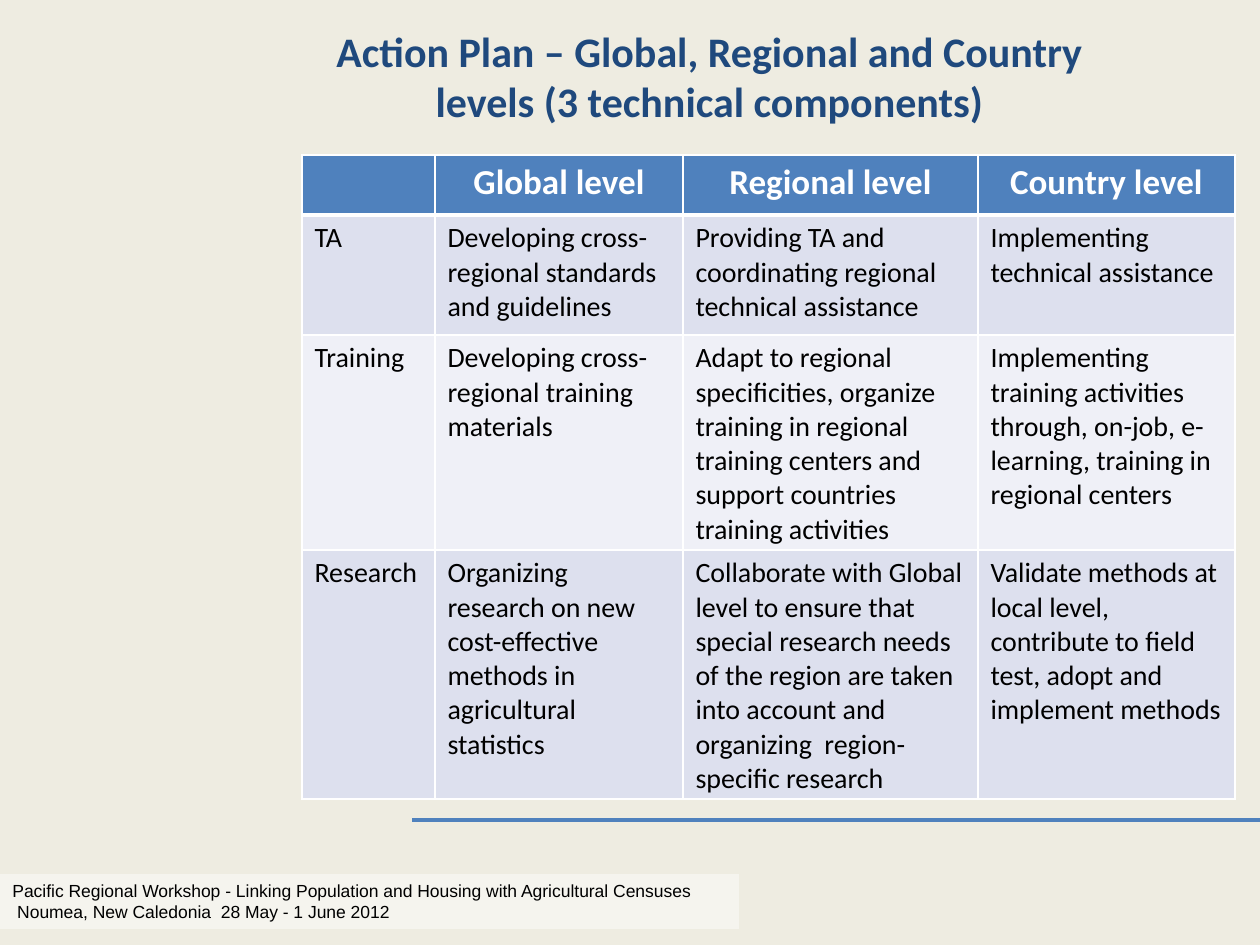
from lxml import etree
from pptx import Presentation
from pptx import util as u
from pptx.dml.color import RGBColor
from pptx.enum import shapes, text
from pptx.oxml import ns

SCALE = 914400 / 126  # EMU in one px
BLUE, NAVY, WHITE, BLACK = "4F81BD", "1F497D", "FFFFFF", "000000"


def px(*lengths):
    return [round(length * SCALE) for length in lengths]


def write(frame, content, font="Calibri", size=16, color=BLACK, bold=False,
          align=text.PP_ALIGN.LEFT):
    frame.word_wrap = True
    frame.text = content
    for para in frame.paragraphs:
        para.alignment = align
        para.font.name = font
        para.font.size = u.Pt(size)
        para.font.bold = bold
        para.font.color.rgb = RGBColor.from_string(color)


deck = Presentation()
deck.slide_width, deck.slide_height = px(1260, 945)
page = deck.slides.add_slide(deck.slide_layouts[6])
page.background.fill.solid()
page.background.fill.fore_color.rgb = RGBColor.from_string("EEECE1")

# Footer on a translucent band
footer = page.shapes.add_shape(shapes.MSO_SHAPE.RECTANGLE, *px(0, 874, 739, 55))
footer.shadow.inherit = False
footer.line.fill.background()
footer.fill.solid()
footer.fill.fore_color.rgb = RGBColor.from_string(WHITE)
tint = footer.fill._xPr.find(".//" + ns.qn("a:srgbClr"))
etree.SubElement(tint, ns.qn("a:alpha"), val="46000")
footer.text_frame.vertical_anchor = text.MSO_ANCHOR.TOP
write(footer.text_frame,
      "Pacific Regional Workshop - Linking Population and Housing with Agricultural Censuses\n"
      " Noumea, New Caledonia  28 May - 1 June 2012", font="Arial", size=10)

# Rule above the footer
rule = page.shapes.add_connector(shapes.MSO_CONNECTOR.STRAIGHT, *px(1260, 820, 412, 820))
rule.line.color.rgb = RGBColor.from_string(BLUE)
rule.line.width = u.Pt(2.5)
etree.SubElement(rule._element.spPr, ns.qn("a:effectLst"))

# Title
title = page.shapes.add_textbox(*px(273, 0, 873, 152))
title.text_frame.vertical_anchor = text.MSO_ANCHOR.MIDDLE
write(title.text_frame,
      "Action Plan – Global, Regional and Country levels (3 technical components)",
      size=24, color=NAVY, bold=True, align=text.PP_ALIGN.CENTER)

# Action plan table
rows = [
    ["", "Global level", "Regional level", "Country level"],
    ["TA",
     "Developing cross-regional standards and guidelines",
     "Providing TA and coordinating regional technical assistance",
     "Implementing technical assistance"],
    ["Training",
     "Developing cross-regional training materials",
     "Adapt to regional specificities, organize training in regional training centers "
     "and support countries training activities",
     "Implementing training activities through, on-job, e-learning, training in regional centers"],
    ["Research",
     "Organizing research on new cost-effective methods in agricultural statistics",
     "Collaborate with Global level to ensure that special research needs of the region "
     "are taken into account and organizing  region-specific research",
     "Validate methods at local level, contribute to field test, adopt and implement methods"],
]
widths = px(133, 248, 295, 257)
heights = px(60, 120, 215, 249)
fills = [BLUE, "DDE0EE", "EFF0F7", "DDE0EE"]

table = page.shapes.add_table(len(rows), len(widths), *px(302, 155),
                              sum(widths), sum(heights)).table
for column, width in zip(table.columns, widths):
    column.width = width

for r, row in enumerate(rows):
    table.rows[r].height = heights[r]
    for c, content in enumerate(row):
        cell = table.cell(r, c)
        cell.fill.solid()
        cell.fill.fore_color.rgb = RGBColor.from_string(fills[r])
        if r == 0:
            write(cell.text_frame, content, size=20, color=WHITE, bold=True,
                  align=text.PP_ALIGN.CENTER)
        else:
            write(cell.text_frame, content)

        # White borders, thicker under the header
        sides = {"L": 1, "R": 1, "T": 3 if r == 1 else 1, "B": 3 if r == 0 else 1}
        for place, (side, points) in enumerate(sides.items()):
            border = etree.Element(ns.qn("a:ln" + side), w=str(u.Pt(points)))
            solid = etree.SubElement(border, ns.qn("a:solidFill"))
            etree.SubElement(solid, ns.qn("a:srgbClr"), val=WHITE)
            cell._tc.get_or_add_tcPr().insert(place, border)

deck.save("out.pptx")
